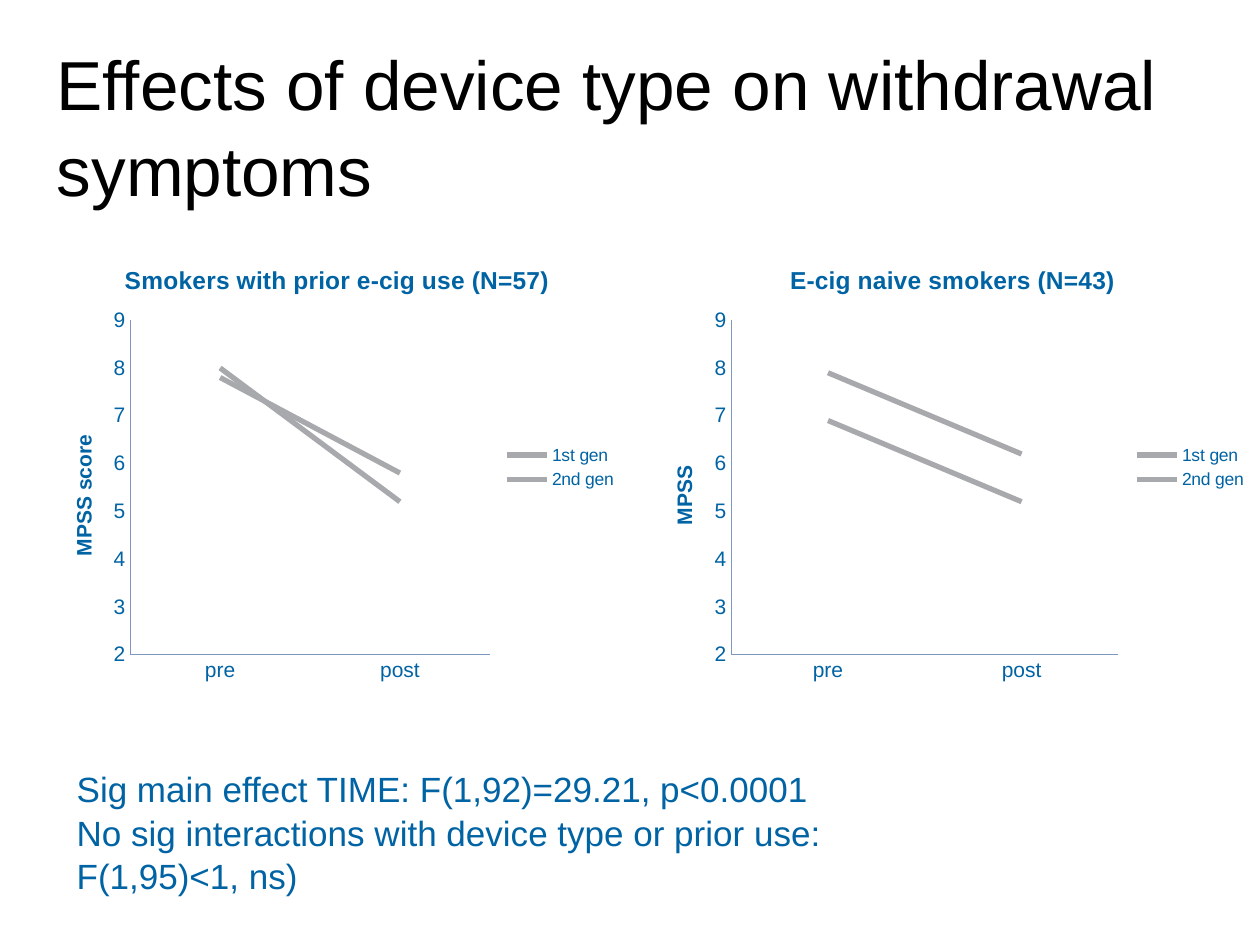
"""Build a slide comparing withdrawal symptoms by e-cigarette device type."""
from lxml import etree
from pptx import Presentation
from pptx.chart.data import CategoryChartData
from pptx.dml.color import RGBColor
from pptx.enum.chart import XL_CHART_TYPE, XL_LEGEND_POSITION, XL_TICK_MARK
from pptx.enum.text import MSO_ANCHOR, PP_ALIGN
from pptx.oxml import parse_xml
from pptx.oxml.ns import nsdecls
from pptx.util import Inches, Pt

LINE_CHART = XL_CHART_TYPE.LINE
LEGEND_RIGHT = XL_LEGEND_POSITION.RIGHT
NO_TICK = XL_TICK_MARK.NONE
TOP = MSO_ANCHOR.TOP
LEFT = PP_ALIGN.LEFT
BLACK = RGBColor(0x00, 0x00, 0x00)
BLUE = RGBColor(0x00, 0x63, 0xA4)
AXIS_BLUE = RGBColor(0x7F, 0x98, 0xC0)
GRAY = RGBColor(0xA7, 0xA9, 0xAC)
FONT = "Arial"


def write(frame, text, size, color=BLUE, bold=False, spacing=None):
    frame.text = text
    for para in frame.paragraphs:
        para.alignment = LEFT if spacing else None
        para.line_spacing = spacing
        for span in para.runs:
            span.font.name = FONT
            span.font.size = Pt(size)
            span.font.bold = bold
            span.font.color.rgb = color


deck = Presentation()
deck.slide_width, deck.slide_height = Inches(10), Inches(7.5)
page = deck.slides.add_slide(deck.slide_layouts[5])

title = page.shapes.title
title.left, title.top = Inches(0.35), Inches(0.3)
title.width, title.height = Inches(9.15), Inches(1.25)
title.text_frame.vertical_anchor = TOP
title.text_frame.margin_top = 0
write(title.text_frame, "Effects of device type on withdrawal symptoms",
      39.6, color=BLACK, spacing=1.04)

panels = [
    ("Smokers with prior e-cig use (N=57)", "MPSS score", 0.35, 4.65,
     (0.147, 0.614), [(7.8, 5.8), (8, 5.2)]),
    ("E-cig naive smokers (N=43)", "MPSS", 5.12, 4.88,
     (0.14, 0.63), [(6.9, 5.2), (7.9, 6.2)]),
]
for heading, axis_label, left, width, (plot_left, plot_width), scores in panels:
    data = CategoryChartData()
    data.categories = ["pre", "post"]
    for generation, values in zip(["1st gen", "2nd gen"], scores):
        data.add_series(generation, values)
    chart = page.shapes.add_chart(LINE_CHART, Inches(left), Inches(1.94),
                                  Inches(width), Inches(3.54), data).chart
    chart.font.name = FONT
    chart.font.size = Pt(10)
    chart.font.color.rgb = BLUE
    chart.has_title = True
    write(chart.chart_title.text_frame, heading, 14, bold=True)
    chart.has_legend = True
    chart.legend.position = LEGEND_RIGHT
    chart.legend.include_in_layout = False

    for axis in (chart.category_axis, chart.value_axis):
        axis.major_tick_mark = axis.minor_tick_mark = NO_TICK
        axis.has_major_gridlines = False
        axis.tick_labels.font.size = Pt(12)
        axis.format.line.color.rgb = AXIS_BLUE
        axis.format.line.width = Pt(0.75)
    scale = chart.value_axis
    scale.minimum_scale, scale.maximum_scale, scale.major_unit = 2, 9, 1
    scale.tick_labels.number_format = "0"
    scale.tick_labels.number_format_is_linked = False
    write(scale.axis_title.text_frame, axis_label, 12, bold=True)

    chart.plots[0].vary_by_categories = False
    for series in chart.plots[0].series:
        series.smooth = False
        series.format.line.color.rgb = GRAY
        series.format.line.width = Pt(3)

    plot_area = chart.plots[0]._element.getparent()
    for layout in plot_area.findall("c:layout", plot_area.nsmap):
        plot_area.remove(layout)
    layout = parse_xml(f'<c:layout {nsdecls("c")}><c:manualLayout/></c:layout>')
    settings = [("layoutTarget", "inner"), ("xMode", "edge"), ("yMode", "edge"),
                ("x", plot_left), ("y", 0.17), ("w", plot_width), ("h", 0.75)]
    for name, value in settings:
        etree.SubElement(layout[0], f"{{{layout.nsmap['c']}}}{name}", val=str(value))
    plot_area.insert(0, layout)

findings = page.shapes.add_textbox(Inches(0.51), Inches(6.03), Inches(6.22), Inches(1.11))
findings.text_frame.word_wrap = True
write(findings.text_frame,
      "Sig main effect TIME: F(1,92)=29.21, p<0.0001\n"
      "No sig interactions with device type or prior use: F(1,95)<1, ns)",
      20, spacing=1.04)

deck.save("out.pptx")
